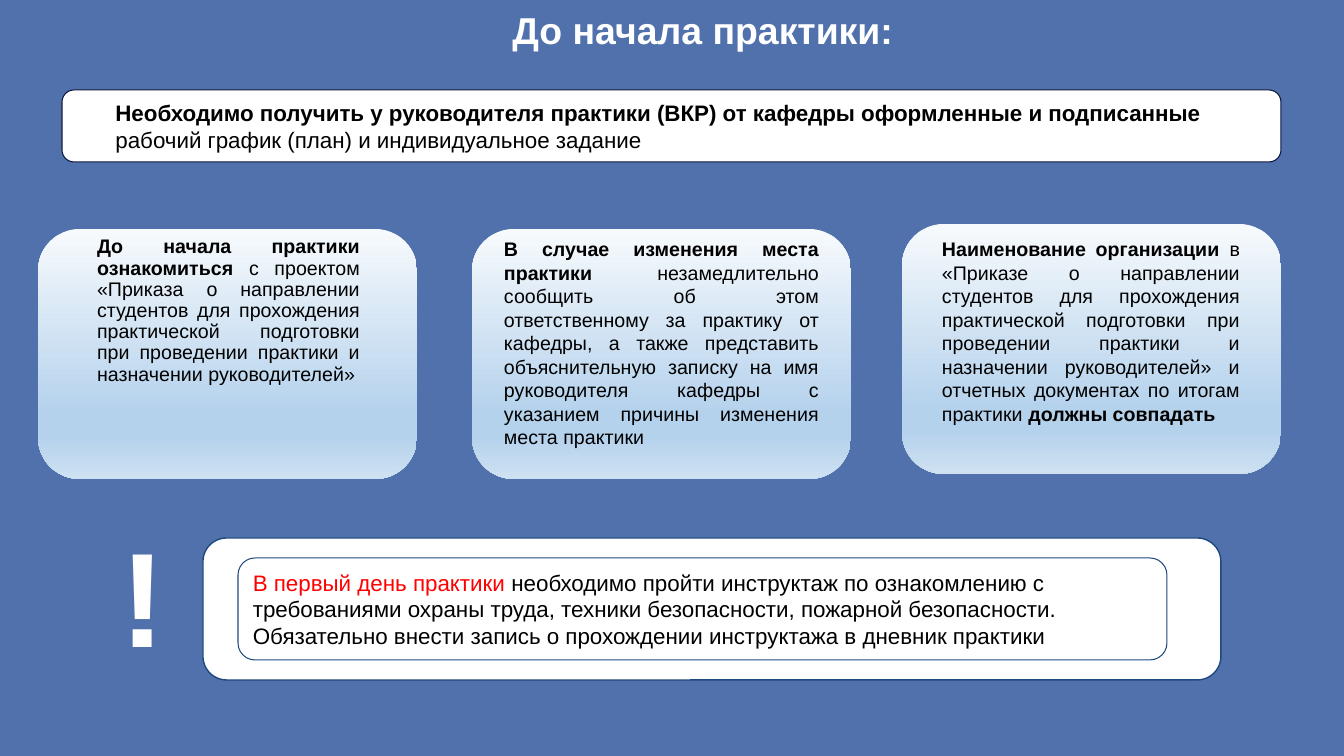
from pptx import Presentation
from pptx.dml.color import RGBColor
from pptx.enum.shapes import MSO_SHAPE
from pptx.enum.text import MSO_ANCHOR, MSO_AUTO_SIZE, PP_ALIGN
from pptx.oxml import parse_xml
from pptx.oxml.ns import nsdecls
from pptx.util import Inches, Pt

PX = Inches(7.5) / 756
HUES = {
    "back": "5171AC", "white": "FFFFFF", "black": "000000", "red": "FF0000",
    "navy": "0C153C", "edge": "1F497D",
    "pale": "F7FAFD", "sky": "B5D2EC", "mist": "CEE1F2",
}
FADE = [(0, "pale"), (74, "sky"), (83, "sky"), (100, "mist")]


def panel(box, fill=None, line=None, width=1):
    shape = slide.shapes.add_shape(MSO_SHAPE.ROUNDED_RECTANGLE, *[round(v * PX) for v in box])
    shape.shadow.inherit = False
    if fill == "fade":
        stops = "".join(
            f'<a:gs pos="{pos * 1000}"><a:srgbClr val="{HUES[hue]}"/></a:gs>' for pos, hue in FADE)
        shape.element.spPr.prstGeom.addnext(parse_xml(
            f'<a:gradFill {nsdecls("a")} rotWithShape="1"><a:gsLst>{stops}</a:gsLst>'
            '<a:lin ang="5400000" scaled="0"/></a:gradFill>'))
    elif fill:
        shape.fill.solid()
        shape.fill.fore_color.rgb = RGBColor.from_string(HUES[fill])
    else:
        shape.fill.background()
    if line:
        shape.line.color.rgb = RGBColor.from_string(HUES[line])
        shape.line.width = Pt(width)
    else:
        shape.line.fill.background()
    return shape


def write(shape, paras, size, inset=None, anchor=MSO_ANCHOR.TOP,
          fit=MSO_AUTO_SIZE.NONE, indent=0, **style):
    """Fill a shape with paragraphs, each a list of (text, hue, bold) runs."""
    frame = shape.text_frame
    form = {"word_wrap": True, "auto_size": fit, "vertical_anchor": anchor}
    if inset:
        for side in ("left", "right", "top", "bottom"):
            form[f"margin_{side}"] = round(inset * PX)
    for name, value in form.items():
        setattr(frame, name, value)
    for i, runs in enumerate(paras):
        para = frame.add_paragraph() if i else frame.paragraphs[0]
        for name, value in style.items():
            setattr(para, name, value)
        if indent:
            para.level = 1
            para._p.get_or_add_pPr().set("marL", str(round(indent * PX)))
        for text, hue, bold in runs:
            run = para.add_run()
            run.text = text
            for name, value in {"name": "Arial", "size": Pt(size), "bold": bold}.items():
                setattr(run.font, name, value)
            run.font.color.rgb = RGBColor.from_string(HUES[hue])


deck = Presentation()
deck.slide_width, deck.slide_height = round(1344 * PX), round(756 * PX)
slide = deck.slides.add_slide(deck.slide_layouts[0])
slide.background.fill.solid()
slide.background.fill.fore_color.rgb = RGBColor.from_string(HUES["back"])
title, body = slide.placeholders

# Three cards, the first one written in the subtitle placeholder
for left, top in [(902, 224), (472, 229), (38, 229)]:
    panel((left, top, 379, 250), "fade")

notes = [
    (body, (84, 224, 289, 228), [
        ("До начала практики ознакомиться ", "black", True),
        ("с проектом «Приказа о направлении студентов для прохождения практической "
         "подготовки при проведении практики и назначении руководителей»", "black", False),
    ], {"line_spacing": 0.9, "space_before": Pt(10)}),
    (None, (491, 224, 341, 275), [
        ("В случае изменения места практики ", "black", True),
        ("незамедлительно сообщить об этом ответственному за практику от кафедры, "
         "а также представить объяснительную записку на имя руководителя кафедры "
         "с указанием причины изменения места практики", "black", False),
    ], {}),
    (None, (929, 224, 324, 301), [
        ("Наименование организации ", "black", True),
        ("в «Приказе о направлении студентов для прохождения практической подготовки "
         "при проведении практики и назначении руководителей» и отчетных документах "
         "по итогам практики ", "black", False),
        ("должны совпадать ", "black", True),
    ], {}),
]
for holder, box, runs, style in notes:
    spot = [round(v * PX) for v in box]
    note = holder or slide.shapes.add_textbox(*spot)
    note.left, note.top, note.width, note.height = spot
    note.element.getparent().append(note.element)
    write(note, [runs], 14, 13, alignment=PP_ALIGN.JUSTIFY, **style)

title.left, title.top, title.width, title.height = [round(v * PX) for v in (103, -1, 1200, 122)]
title.element.getparent().append(title.element)
write(title, [[("До начала практики:", "white", True)]], 26.7, 13,
      alignment=PP_ALIGN.CENTER, line_spacing=0.9, space_before=Pt(7.5))

# White panels above and below the cards
plain = {"anchor": MSO_ANCHOR.MIDDLE, "fit": MSO_AUTO_SIZE.SHAPE_TO_FIT_TEXT,
         "alignment": PP_ALIGN.LEFT}
write(panel((62, 90, 1219, 72), "white", "navy", 0.75), [
    [("Необходимо получить у руководителя практики (ВКР) от кафедры оформленные "
      "и подписанные", "black", True)],
    [("рабочий график (план) и индивидуальное задание", "black", False)],
], 16, indent=40, **plain)

panel((203, 538, 1018, 142), "white", "edge")
write(panel((238, 558, 929, 102), None, "edge", 0.75), [
    [("В первый день практики ", "red", False),
     ("необходимо пройти инструктаж по ознакомлению с требованиями охраны труда, "
      "техники безопасности, пожарной безопасности.", "black", False)],
    [("Обязательно внести запись о прохождении инструктажа в дневник практики",
      "black", False)],
], 16, **plain)

mark = slide.shapes.add_textbox(*[round(v * PX) for v in (111, 508, 116, 173)])
write(mark, [[("!", "white", True)]], 96, fit=MSO_AUTO_SIZE.SHAPE_TO_FIT_TEXT)

deck.save("out.pptx")
